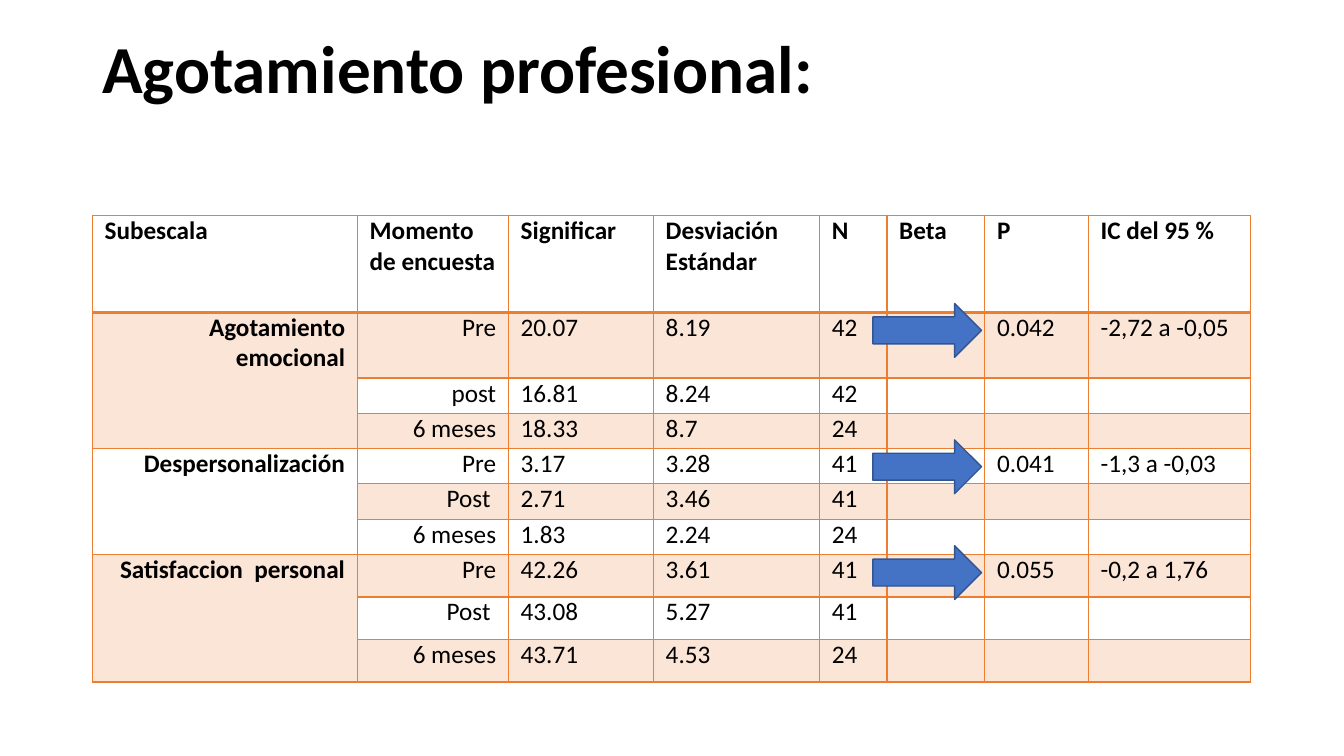
from dataclasses import dataclass

from lxml import etree
from pptx import Presentation
from pptx import util as u
from pptx.dml.color import RGBColor
from pptx.enum import shapes, text
from pptx.oxml import ns


@dataclass(frozen=True)
class Theme:
    font: str = "Calibri"
    title_size: float = 48
    table_size: float = 18
    ink: str = "000000"
    border: str = "ED7D31"
    band: str = "FBE5D6"
    arrow: str = "4472C4"
    arrow_line: str = "325491"


THEME = Theme()

TITLE_BOX = (66, 18, 828, 66)
TABLE_BOX = (66, 154, 828, 333)
COLUMN_WIDTHS = [189.3, 107.9, 103.6, 118.6, 48.2, 70, 73.9, 116.1]
ROW_HEIGHTS = [69, 47] + [25.2] * 5 + [30.4] * 3
ARROW_SIZE = (77.6, 38.4)
CELL_INSET = 8.8

HEADINGS = ["Subescala", "Momento de encuesta", "Significar",
            "Desviación Estándar", "N", "Beta", "P", "IC del 95 %"]
BETA = HEADINGS.index("Beta")
SUBSCALES = [
    ("Agotamiento emocional", [
        ["Pre", "20.07", "8.19", "42", "", "0.042", "-2,72 a -0,05"],
        ["post", "16.81", "8.24", "42"],
        ["6 meses", "18.33", "8.7", "24"]]),
    ("Despersonalización", [
        ["Pre", "3.17", "3.28", "41", "", "0.041", "-1,3 a -0,03"],
        ["Post ", "2.71", "3.46", "41"],
        ["6 meses", "1.83", "2.24", "24"]]),
    ("Satisfaccion  personal", [
        ["Pre", "42.26", "3.61", "41", "", "0.055", "-0,2 a 1,76"],
        ["Post ", "43.08", "5.27", "41"],
        ["6 meses", "43.71", "4.53", "24"]]),
]
MOMENTS = 3


def apply_format(target, values):
    for name, value in values.items():
        setattr(target, name, value)


def write(paragraph, words, size, bold, align=text.PP_ALIGN.LEFT):
    paragraph.alignment = align
    run = paragraph.add_run()
    run.text = words
    apply_format(run.font, {"name": THEME.font, "size": u.Pt(size), "bold": bold})
    run.font.color.rgb = RGBColor.from_string(THEME.ink)


def add_title(slide, box):
    shape = slide.shapes.add_textbox(*map(u.Pt, box))
    frame = shape.text_frame
    apply_format(frame, {"word_wrap": True,
                         "vertical_anchor": text.MSO_ANCHOR.MIDDLE})
    paragraph = frame.paragraphs[0]
    paragraph.line_spacing = 0.9
    write(paragraph, "Agotamiento profesional:", THEME.title_size, True)


def set_border(cell, side, width):
    line = etree.SubElement(cell._tc.get_or_add_tcPr(), ns.qn(f"a:ln{side}"),
                            w=str(u.Pt(width)))
    fill = etree.SubElement(line, ns.qn("a:solidFill"))
    etree.SubElement(fill, ns.qn("a:srgbClr"), val=THEME.border)


def style_cell(cell, row):
    apply_format(cell, {"margin_left": u.Pt(CELL_INSET),
                        "margin_right": u.Pt(CELL_INSET),
                        "margin_top": 0, "margin_bottom": 0})
    heavy_side = {0: "B", 1: "T"}.get(row)
    for side in "LRTB":
        set_border(cell, side, 2.25 if side == heavy_side else 1)
    if row % 2:
        cell.fill.solid()
        cell.fill.fore_color.rgb = RGBColor.from_string(THEME.band)
    else:
        cell.fill.background()


def table_rows():
    """Return every row at full width, with each subscale named once."""
    rows = [HEADINGS]
    for subscale, moments in SUBSCALES:
        for index, values in enumerate(moments):
            row = ["" if index else subscale] + values
            rows.append(row + [""] * (len(HEADINGS) - len(row)))
    return rows


def add_results_table(slide, box):
    rows = table_rows()
    table = slide.shapes.add_table(len(rows), len(HEADINGS),
                                   *map(u.Pt, box)).table
    apply_format(table, {"first_row": False, "horz_banding": False})
    for column, width in zip(table.columns, COLUMN_WIDTHS):
        column.width = u.Pt(width)
    for row, height in zip(table.rows, ROW_HEIGHTS):
        row.height = u.Pt(height)
    for r, values in enumerate(rows):
        for c, words in enumerate(values):
            cell = table.cell(r, c)
            style_cell(cell, r)
            align = text.PP_ALIGN.RIGHT if r and c < 2 else text.PP_ALIGN.LEFT
            paragraph = cell.text_frame.paragraphs[0]
            paragraph.font.size = u.Pt(THEME.table_size)
            if words:
                write(paragraph, words, THEME.table_size, r == 0 or c == 0, align)
    for first in range(1, len(rows), MOMENTS):
        table.cell(first, 0).merge(table.cell(first + MOMENTS - 1, 0))


def add_beta_arrows(slide, box):
    """Point at the P value in the first row of each subscale."""
    width, height = ARROW_SIZE
    left = box[0] + sum(COLUMN_WIDTHS[:BETA + 1]) - width - 2.5
    for first in range(1, len(ROW_HEIGHTS), MOMENTS):
        text_middle = box[1] + sum(ROW_HEIGHTS[:first]) + 13
        arrow = slide.shapes.add_shape(
            shapes.MSO_SHAPE.RIGHT_ARROW,
            *map(u.Pt, (left, text_middle - height / 2, width, height)))
        arrow.shadow.inherit = False
        arrow.fill.solid()
        arrow.fill.fore_color.rgb = RGBColor.from_string(THEME.arrow)
        arrow.line.color.rgb = RGBColor.from_string(THEME.arrow_line)
        arrow.line.width = u.Pt(1)


def main():
    presentation = Presentation()
    apply_format(presentation, {"slide_width": u.Pt(960),
                                "slide_height": u.Pt(540)})
    slide = presentation.slides.add_slide(presentation.slide_layouts[6])
    add_title(slide, TITLE_BOX)
    add_results_table(slide, TABLE_BOX)
    add_beta_arrows(slide, TABLE_BOX)
    presentation.save("out.pptx")


if __name__ == "__main__":
    main()
